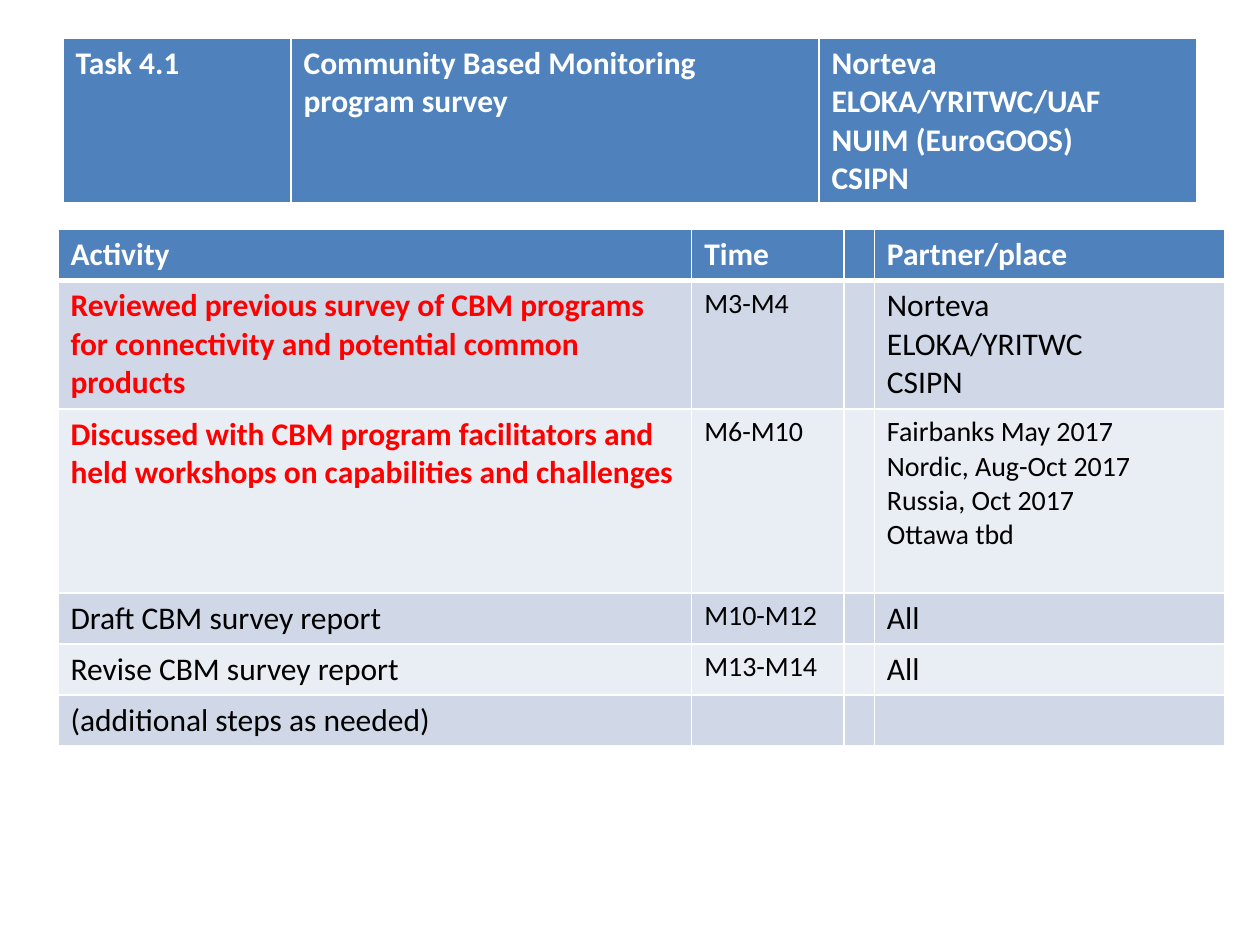
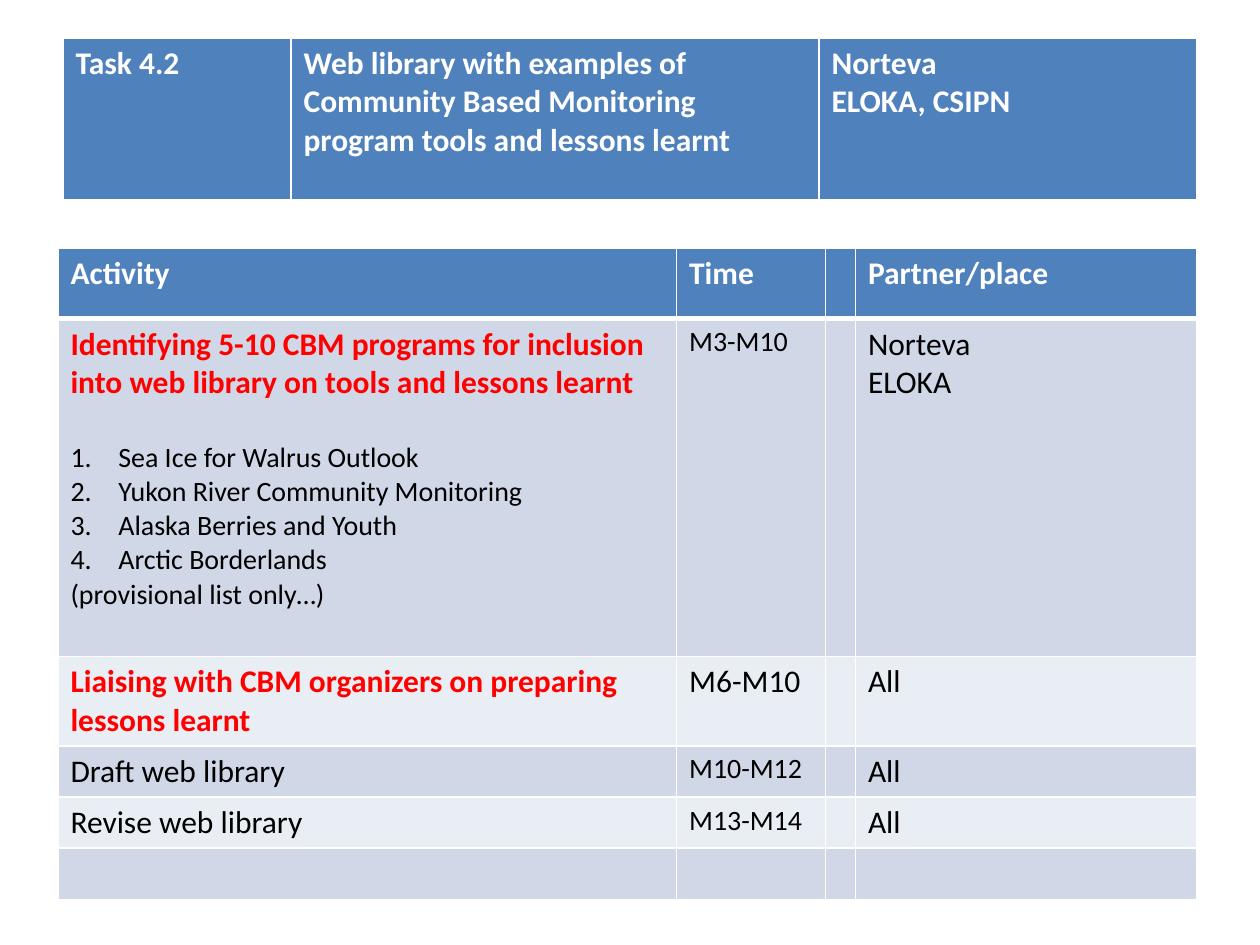
from lxml.etree import SubElement
from pptx import Presentation
from pptx.dml.color import RGBColor
from pptx.oxml.ns import qn
from pptx.util import Inches, Pt

COLORS = {
    "header": "4F81BD",
    "odd_row": "D0D8E8",
    "even_row": "E9EDF4",
    "white": "FFFFFF",
    "done": "FF0000",
    "text": "000000",
}
FONT = "Calibri"

# Text styles: size, colour, bold
STYLES = {
    "header": (18, "white", True),
    "done": (18, "done", True),
    "normal": (18, "text", False),
    "small": (16, "text", False),
    "numbered": (16, "text", False),
}
TASK_COLUMNS = [1.81, 4.19, 3]
ACTIVITY_HEADER = [{"header": ["Activity"]}, {"header": ["Time"]}, {},
                   {"header": ["Partner/place"]}]

# Each cell maps a text style to its paragraphs
SLIDES = [
    {
        "task": [
            {"header": ["Task 4.1"]},
            {"header": ["Community Based Monitoring program survey"]},
            {"header": ["Norteva", "ELOKA/YRITWC/UAF", "NUIM (EuroGOOS)", "CSIPN"]},
        ],
        "top": 1.82,
        "columns": [5.03, 1.21, 0.24, 2.78],
        "heights": [0.4, 1.02, 1.46, 0.4, 0.4, 0.4],
        "activities": [
            [{"done": ["Reviewed previous survey of CBM programs for connectivity "
                       "and potential common products"]},
             {"small": ["M3-M4"]}, {},
             {"normal": ["Norteva", "ELOKA/YRITWC", "CSIPN"]}],
            [{"done": ["Discussed with CBM program facilitators and held workshops "
                       "on capabilities and challenges"]},
             {"small": ["M6-M10"]}, {},
             {"small": ["Fairbanks May 2017", "Nordic, Aug-Oct 2017",
                        "Russia, Oct 2017", "Ottawa tbd"]}],
            [{"normal": ["Draft CBM survey report"]}, {"small": ["M10-M12"]}, {},
             {"normal": ["All"]}],
            [{"normal": ["Revise CBM survey report"]}, {"small": ["M13-M14"]}, {},
             {"normal": ["All"]}],
            [{"normal": ["(additional steps as needed)"]}, {}, {}, {}],
        ],
    },
    {
        "task": [
            {"header": ["Task 4.2"]},
            {"header": ["Web library with examples of Community Based Monitoring "
                        "program tools and lessons learnt"]},
            {"header": ["Norteva", "ELOKA, CSIPN"]},
        ],
        "top": 1.97,
        "columns": [4.91, 1.18, 0.23, 2.71],
        "heights": [0.56, 2.68, 0.7, 0.4, 0.4, 0.4],
        "activities": [
            [{"done": ["Identifying 5-10 CBM programs for inclusion into web library "
                       "on tools and lessons learnt"],
              "numbered": ["Sea Ice for Walrus Outlook",
                           "Yukon River Community Monitoring",
                           "Alaska Berries and Youth", "Arctic Borderlands"],
              "small": ["(provisional list only…)"]},
             {"small": ["M3-M10"]}, {},
             {"normal": ["Norteva", "ELOKA"]}],
            [{"done": ["Liaising with CBM organizers on preparing lessons learnt"]},
             {"normal": ["M6-M10"]}, {}, {"normal": ["All"]}],
            [{"normal": ["Draft web library"]}, {"small": ["M10-M12"]}, {},
             {"normal": ["All"]}],
            [{"normal": ["Revise web library"]}, {"small": ["M13-M14"]}, {},
             {"normal": ["All"]}],
            [{}, {}, {}, {}],
        ],
    },
]


def fill_cell(cell, content, row_index):
    # Borders: thin white lines, thick below the header row
    properties = cell._tc.get_or_add_tcPr()
    widths = {"lnL": 1, "lnR": 1, "lnT": 3 if row_index == 1 else 1,
              "lnB": 3 if row_index == 0 else 1}
    for side, width in widths.items():
        line = SubElement(properties, qn(f"a:{side}"), w=str(Pt(width)))
        solid = SubElement(line, qn("a:solidFill"))
        SubElement(solid, qn("a:srgbClr"), val=COLORS["white"])

    # Banded fill
    band = "header" if row_index == 0 else "odd_row" if row_index % 2 else "even_row"
    cell.fill.solid()
    cell.fill.fore_color.rgb = RGBColor.from_string(COLORS[band])

    # Text
    paragraph = None
    for style, lines in content.items():
        size, color, bold = STYLES[style]
        for index, text in enumerate(lines):
            if paragraph is None:
                paragraph = cell.text_frame.paragraphs[0]
            else:
                paragraph = cell.text_frame.add_paragraph()
            if style == "numbered":
                if index == 0:
                    paragraph.space_before = Pt(22)
                numbering = paragraph._p.get_or_add_pPr()
                numbering.set("marL", str(Inches(0.38)))
                numbering.set("indent", str(-Inches(0.38)))
                SubElement(numbering, qn("a:buAutoNum"), type="arabicPeriod")
            run = paragraph.add_run()
            run.text = text
            run.font.name = FONT
            run.font.size = Pt(size)
            run.font.bold = bold
            run.font.color.rgb = RGBColor.from_string(COLORS[color])


def add_grid(slide, left, top, columns, heights, rows):
    table = slide.shapes.add_table(
        len(rows), len(columns), Inches(left), Inches(top),
        Inches(sum(columns)), Inches(sum(heights))).table
    for column, width in zip(table.columns, columns):
        column.width = Inches(width)
    for row_index, (row, height, contents) in enumerate(zip(table.rows, heights, rows)):
        row.height = Inches(height)
        for cell, content in zip(row.cells, contents):
            fill_cell(cell, content, row_index)


presentation = Presentation()
presentation.slide_width = Inches(10)
presentation.slide_height = Inches(7.5)

for page in SLIDES:
    slide = presentation.slides.add_slide(presentation.slide_layouts[6])
    # Task banner
    add_grid(slide, 0.5, 0.3, TASK_COLUMNS, [1.3], [page["task"]])
    # Activity plan
    add_grid(slide, 0.46, page["top"], page["columns"], page["heights"],
             [ACTIVITY_HEADER] + page["activities"])

presentation.save("out.pptx")
